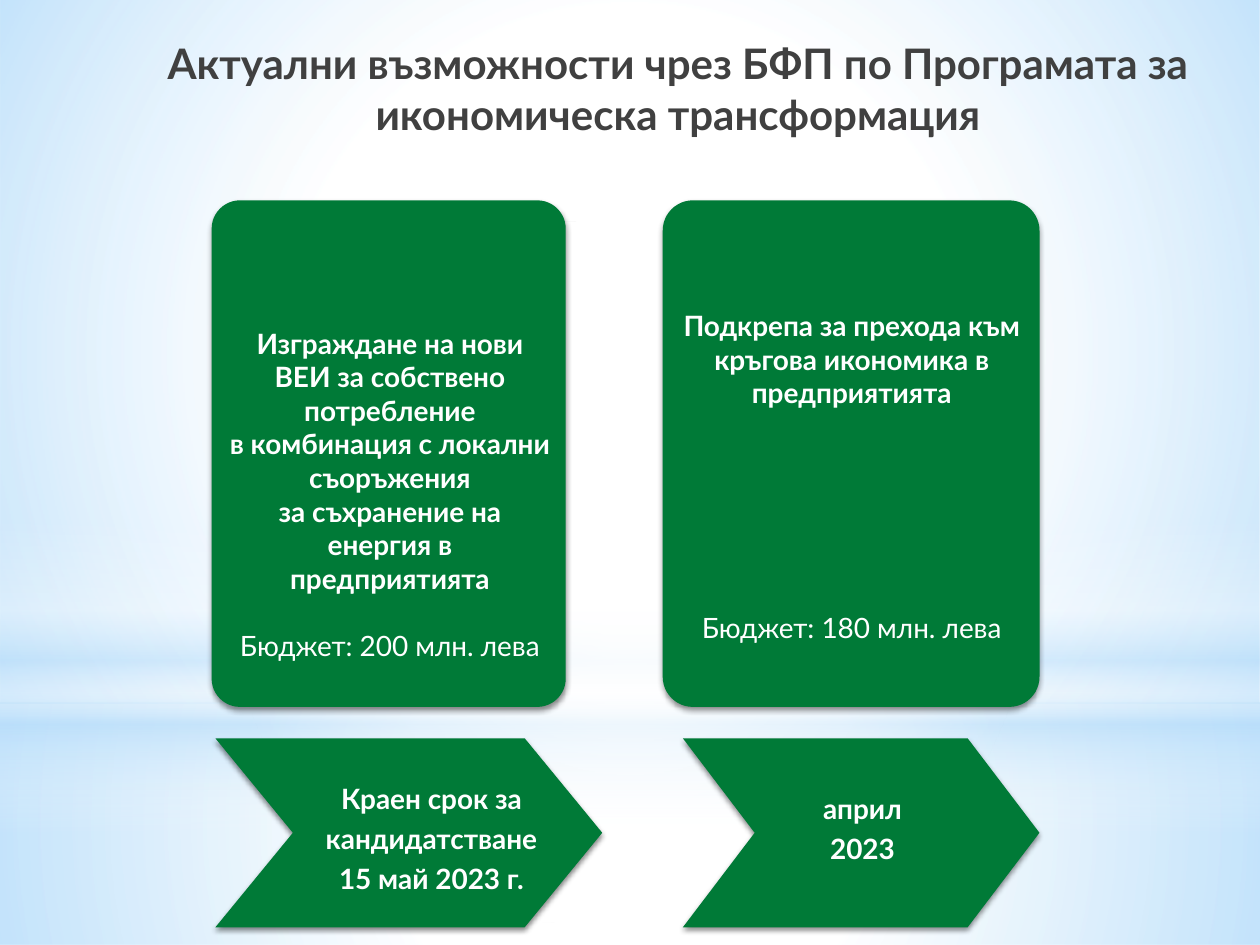
from dataclasses import dataclass
from lxml import etree
from pptx import Presentation
from pptx import util as u
from pptx.dml.color import RGBColor
from pptx.enum import shapes as s, text as t
from pptx.oxml import parse_xml

NS = 'xmlns:a="http://schemas.openxmlformats.org/drawingml/2006/main"'


@dataclass(frozen=True)
class Theme:
    font: str = "Lato"
    green: str = "007A37"
    white: str = "FFFFFF"
    sky: str = "B4DCFA"
    ink: str = "404040"
    head: int = 24
    body: int = 16


class Deck:
    """Style and current slide; lengths count cells of a 100 x 75 grid."""

    def __init__(self, theme):
        self.theme = theme
        self.prs = Presentation()
        self.prs.slide_width, self.prs.slide_height = u.Inches(10), u.Inches(7.5)
        self.cell = self.prs.slide_width / 100
        self.lay = self.prs.slide_layouts[5]
        self.slide = self.prs.slides.add_slide(self.lay)

    def place(self, box):
        return [round(n * self.cell) for n in box]

    def shape(self, kind, box, adj=None):
        shp = self.slide.shapes.add_shape(kind, *self.place(box))
        shp.shadow.inherit = False
        shp.line.fill.background()
        if adj is not None:
            shp.adjustments[0] = adj
        return shp

    def glow(self, kind, box, stops, angle=None):
        """Gradient backdrop, kept on the layout behind the slide."""
        shp = self.shape(kind, box)
        marks = "".join(
            f'<a:gs pos="{pos * 1000}"><a:srgbClr val="{col}">'
            f'<a:alpha val="{alpha * 1000}"/></a:srgbClr></a:gs>'
            for pos, col, alpha in stops)
        if angle is None:
            way = ('<a:path path="circle"><a:fillToRect l="50000" t="50000" '
                   'r="50000" b="50000"/></a:path>')
        else:
            way = f'<a:lin ang="{angle * 60000}" scaled="0"/>'
        grad = parse_xml(f'<a:gradFill {NS} rotWithShape="1">'
                         f'<a:gsLst>{marks}</a:gsLst>{way}</a:gradFill>')
        shp.element.spPr.find("{*}prstGeom").addnext(grad)
        tree = self.lay.shapes.element
        shp.element.nvSpPr.cNvPr.set("id", str(100 + len(tree)))
        tree.append(shp.element)

    def block(self, kind, box, adj):
        """Green shape with a soft shadow below."""
        shp = self.shape(kind, box, adj)
        shp.fill.solid()
        shp.fill.fore_color.rgb = RGBColor.from_string(self.theme.green)
        shade = etree.SubElement(
            shp.element.spPr.find("{*}effectLst"),
            "{http://schemas.openxmlformats.org/drawingml/2006/main}outerShdw",
            blurRad=str(u.Pt(3.1)), dist=str(u.Pt(1.8)), dir="5400000",
            algn="ctr", rotWithShape="0")
        shade.append(parse_xml(f'<a:srgbClr {NS} val="000000">'
                               '<a:alpha val="45000"/></a:srgbClr>'))

    def add_run(self, par, words, size, color, bold=True):
        par.alignment = t.PP_ALIGN.CENTER
        run = par.add_run()
        run.text = words
        font = run.font
        font.name, font.size, font.bold = self.theme.font, u.Pt(size), bold
        font.color.rgb = RGBColor.from_string(color)

    def title(self, box, words):
        hold = self.slide.shapes.title
        hold.left, hold.top, hold.width, hold.height = self.place(box)
        frame = hold.text_frame
        frame.word_wrap = True
        frame.vertical_anchor = t.MSO_ANCHOR.TOP
        self.add_run(frame.paragraphs[0], words, self.theme.head, self.theme.ink)

    def text(self, box, lines, last=None, gap=0, tight=False):
        """Bold lines, then an optional plain last line after a gap."""
        frame = self.slide.shapes.add_textbox(*self.place(box)).text_frame
        frame.word_wrap = True
        rows = [(line, True) for line in lines]
        if last:
            rows.append((last, False))
        for num, (line, bold) in enumerate(rows):
            par = frame.add_paragraph() if num else frame.paragraphs[0]
            self.add_run(par, line, self.theme.body, self.theme.white, bold)
            if tight:
                par.line_spacing, par.space_after = 0.9, u.Pt(5.6)
            if not bold:
                par.space_before = u.Pt(gap)


def main():
    look = Theme()
    deck = Deck(look)
    kind = s.MSO_SHAPE
    white, sky = look.white, look.sky

    # Backdrop
    deck.glow(kind.RECTANGLE, (0, 55.8, 100, 19.2),
              [(0, white, 91), (37, white, 76), (100, sky, 79)])
    deck.glow(kind.RECTANGLE, (0, 0, 100, 55.8),
              [(0, white, 89), (48, white, 62), (100, sky, 79)])
    deck.glow(kind.RECTANGLE, (0, 41.2, 100, 25),
              [(0, white, 0), (29, white, 30), (45, sky, 40),
               (55, white, 26), (65, sky, 60), (100, white, 0)], 90)
    deck.glow(kind.OVAL, (0, 17.5, 100, 55.8), [(0, white, 100), (56, white, 0)])

    # Title
    deck.title((11.7, 2.5, 84.2, 12.6),
               "Актуални възможности чрез БФП по Програмата за "
               "икономическа трансформация")

    # Deadline arrows: left, width, point depth, text box, lines
    arrows = [
        (54.2, 28.3, 0.38, (59.9, 62.6, 17.1, 10.8), ["април", "2023"]),
        (17.1, 30.7, 0.41, (19.6, 61.8, 29.3, 12.2),
         ["Краен срок за", "кандидатстване", "15 май 2023 г."]),
    ]
    for left, wide, tip, box, lines in arrows:
        deck.block(kind.CHEVRON, (left, 58.6, wide, 15), tip)
        deck.text(box, lines, tight=True)

    # Programme cards: left, width, text box, lines, budget, gap above it
    cards = [
        (16.8, 28.1, (17, 25.4, 27.9, 28),
         ["Изграждане на нови ВЕИ за собствено потребление",
          "в комбинация с локални съоръжения",
          "за съхранение на енергия в предприятията"],
         "Бюджет: 200 млн. лева", 19.2),
        (52.6, 29.9, (49.7, 24, 35.8, 27.9),
         ["Подкрепа за прехода към кръгова икономика в предприятията"],
         "Бюджет: 180 млн. лева", 115.2),
    ]
    for left, wide, box, lines, budget, gap in cards:
        deck.block(kind.ROUNDED_RECTANGLE, (left, 15.9, wide, 40.2), 0.08)
        deck.text(box, lines, budget, gap)

    deck.prs.save("out.pptx")


if __name__ == "__main__":
    main()
